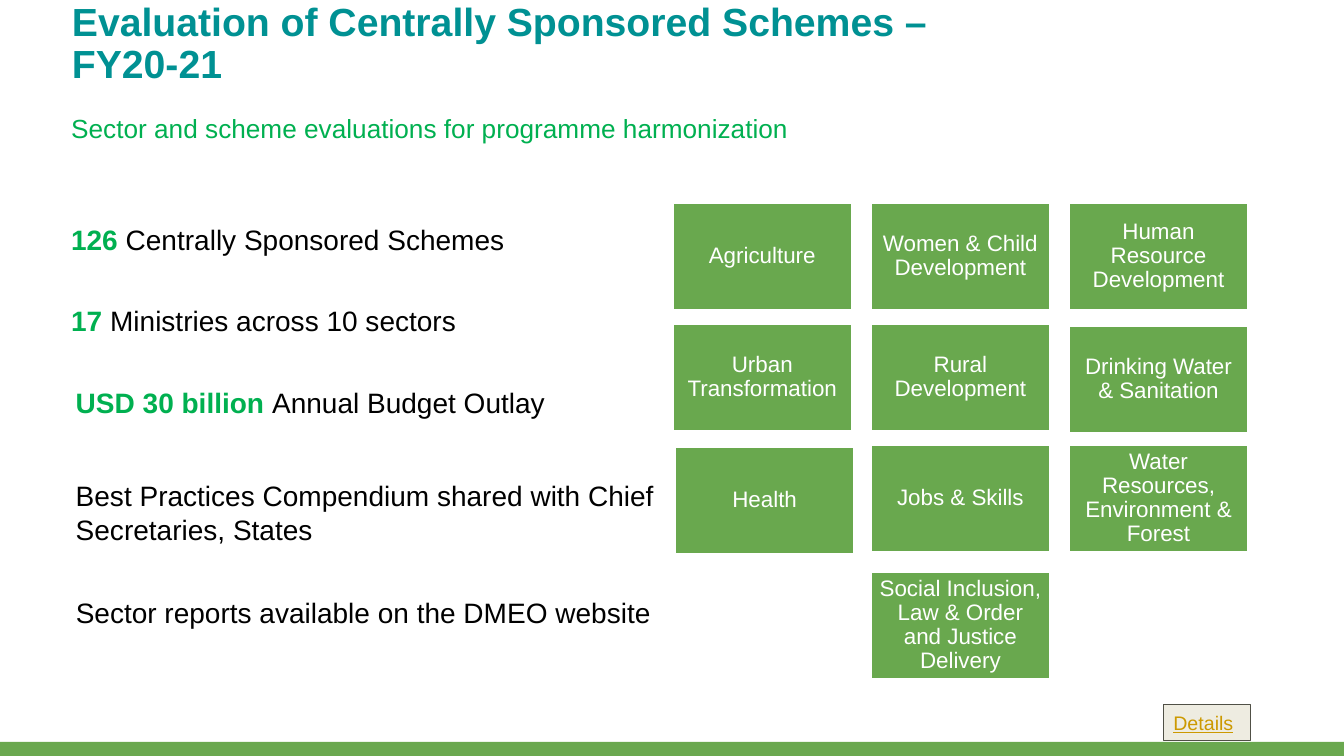
from dataclasses import dataclass

from pptx import Presentation
from pptx.dml.color import RGBColor
from pptx.enum.shapes import MSO_SHAPE
from pptx.enum.text import MSO_ANCHOR, PP_ALIGN
from pptx.util import Pt


@dataclass(frozen=True)
class Theme:
    font: str = "Arial"
    title: str = "009193"
    accent: str = "00B050"
    body: str = "000000"
    tile: str = "69A84E"
    footer: str = "6AA84F"
    white: str = "FFFFFF"
    button: str = "EEECE1"
    button_line: str = "505046"
    link: str = "CC9900"
    title_size: float = 28
    subtitle_size: float = 18.7
    body_size: float = 20
    tile_size: float = 16
    button_size: float = 14


theme = Theme()
deck = Presentation()
deck.slide_width, deck.slide_height = Pt(960), Pt(540)
page = deck.slides.add_slide(deck.slide_layouts[6])


def add_rectangle(left, top, width, height, fill, line=None, line_width=0):
    box = page.shapes.add_shape(MSO_SHAPE.RECTANGLE, Pt(left), Pt(top), Pt(width), Pt(height))
    box.shadow.inherit = False
    box.fill.solid()
    box.fill.fore_color.rgb = RGBColor.from_string(fill)
    if line:
        box.line.color.rgb = RGBColor.from_string(line)
        box.line.width = Pt(line_width)
    else:
        box.line.fill.background()
    return box


def write(box, spans, size, inset, anchor=MSO_ANCHOR.TOP, align=PP_ALIGN.LEFT, spacing=1.0):
    """Fill a box with one paragraph of (text, colour, bold) spans; inset is (sides, top and bottom)."""
    frame = box.text_frame
    frame.word_wrap = True
    frame.vertical_anchor = anchor
    frame.margin_left = frame.margin_right = Pt(inset[0])
    frame.margin_top = frame.margin_bottom = Pt(inset[1])
    para = frame.paragraphs[0]
    para.alignment = align
    para.line_spacing = spacing
    for text, colour, bold in spans:
        span = para.add_run()
        span.text = text
        span.font.name = theme.font
        span.font.size = Pt(size)
        span.font.bold = bold
        span.font.color.rgb = RGBColor.from_string(colour)


add_rectangle(0, 530, 960, 10, theme.footer)

title = page.shapes.add_textbox(Pt(41.8), Pt(11.5), Pt(689), Pt(60.5))
write(title, [("Evaluation of Centrally Sponsored Schemes – FY20-21", theme.title, True)],
      theme.title_size, (9.6, 9.6), MSO_ANCHOR.BOTTOM, spacing=0.9)

subtitle = page.shapes.add_textbox(Pt(41.3), Pt(73.5), Pt(894), Pt(47.5))
write(subtitle, [("Sector and scheme evaluations for programme harmonization", theme.accent, False)],
      theme.subtitle_size, (9.6, 9.6), spacing=0.9)

# Sector tiles: three columns at an equal pitch, with the last tile in the middle column
tile_left, tile_top, column_pitch, row_pitch = 480.2, 144.7, 141.5, 86.4
sectors = [
    "Agriculture", "Women & Child Development", "Human Resource Development",
    "Urban Transformation", "Rural Development", "Drinking Water & Sanitation",
    "Health", "Jobs & Skills", "Water Resources, Environment & Forest",
    None, "Social Inclusion, Law & Order and Justice Delivery",
]
nudges = {
    "Drinking Water & Sanitation": (0, 1.4),
    "Health": (1.7, 1.4),
    "Social Inclusion, Law & Order and Justice Delivery": (0, 4.3),
}
for index, sector in enumerate(sectors):
    if sector is None:
        continue
    row, column = divmod(index, 3)
    shift_x, shift_y = nudges.get(sector, (0, 0))
    tile = add_rectangle(tile_left + column * column_pitch + shift_x,
                         tile_top + row * row_pitch + shift_y,
                         128.6, 77, theme.tile, theme.white, 2)
    write(tile, [(sector, theme.white, False)], theme.tile_size, (4.8, 4.8),
          MSO_ANCHOR.MIDDLE, PP_ALIGN.CENTER, 0.9)

facts = [
    (41.2, 154.2, 377, 34, "126 ", "Centrally Sponsored Schemes"),
    (41.2, 212.3, 338, 34, "17 ", "Ministries across 10 sectors"),
    (44.5, 270.7, 482, 34, "USD 30 billion ", "Annual Budget Outlay"),
    (44.5, 337, 482, 58, "", "Best Practices Compendium shared with Chief Secretaries, States"),
    (44.5, 420.5, 438.5, 34, "", "Sector reports available on the DMEO website"),
]
for left, top, width, height, figure, label in facts:
    fact = page.shapes.add_textbox(Pt(left), Pt(top), Pt(width), Pt(height))
    spans = [(figure, theme.accent, True)] if figure else []
    write(fact, spans + [(label, theme.body, False)], theme.body_size, (9.6, 4.8))

button = add_rectangle(831, 503.2, 62, 25.8, theme.button, theme.button_line, 0.75)
write(button, [("Details", theme.link, False)], theme.button_size, (7.2, 7.2), MSO_ANCHOR.MIDDLE)
button.text_frame.paragraphs[0].runs[0].font.underline = True

deck.save("out.pptx")
